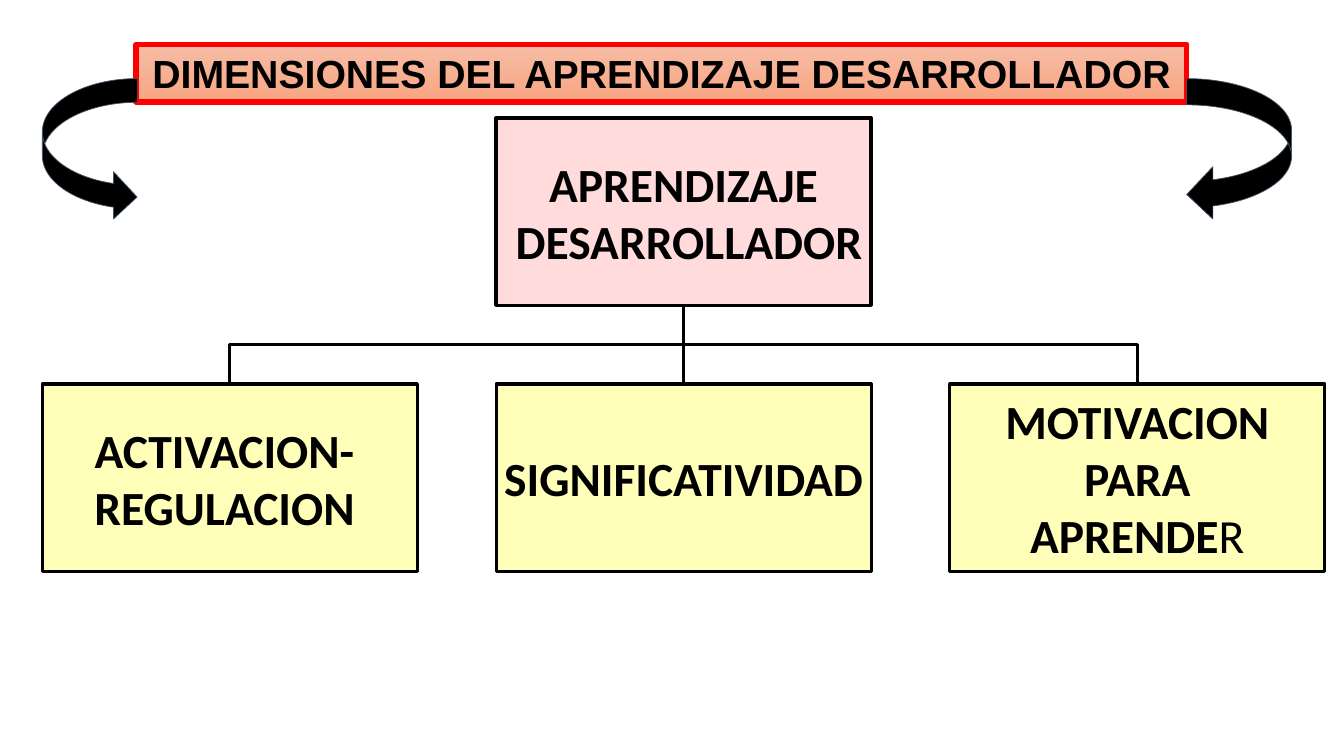
"""Build the slide on the dimensions of developmental learning."""
from dataclasses import dataclass

from lxml import etree
from pptx import Presentation
from pptx import util as u
from pptx.dml.color import RGBColor
from pptx.enum import shapes, text
from pptx.oxml.ns import qn

BLACK = "000000"
NODE_W, NODE_H = 372, 186
TOP_Y, CHILD_Y = 117, 381
CHILD_X, CHILD_STEP = 42, 450


@dataclass
class Run:
    text: str
    bold: bool = True


@dataclass
class Node:
    x: int
    y: int
    fill: str
    alpha: int
    line: float
    lines: list[list[Run]]

    @property
    def mid(self) -> int:
        return self.x + NODE_W // 2


@dataclass
class Arrow:
    kind: shapes.MSO_SHAPE
    x: int
    w: int


CHILD_LINES = [
    [[Run("ACTIVACION- ")], [Run("REGULACION ")]],
    [[Run("SIGNIFICATIVIDAD")]],
    [[Run("MOTIVACION")], [Run("PARA")], [Run("APRENDE"), Run("R", False)]],
]
PARENT = Node(CHILD_X + CHILD_STEP, TOP_Y, "FF0000", 14, 2.5,
              [[Run("APRENDIZAJE")], [Run(" DESARROLLADOR")]])
CHILDREN = [Node(CHILD_X + i * CHILD_STEP, CHILD_Y, "FFFF00", 27, 2.25, lines)
            for i, lines in enumerate(CHILD_LINES)]
ARROWS = [Arrow(shapes.MSO_SHAPE.CURVED_RIGHT_ARROW, 42, 94),
          Arrow(shapes.MSO_SHAPE.CURVED_LEFT_ARROW, 1177, 104)]


def px(n: int) -> int:
    """Turn px, a hundredth of an inch each, into EMU."""
    return u.Emu(n * 9144)


def rgb(value: str) -> RGBColor:
    """Turn a hex string into a colour."""
    return RGBColor.from_string(value)


def set_line(sp, colour: str, width: float) -> None:
    """Give a shape or connector a solid line."""
    sp.line.color.rgb = rgb(colour)
    sp.line.width = u.Pt(width)


def add_shape(slide, kind, x: int, y: int, w: int, h: int):
    """Add a preset shape without a shadow."""
    sp = slide.shapes.add_shape(kind, px(x), px(y), px(w), px(h))
    sp.shadow.inherit = False
    return sp


def write(sp, lines: list[list[Run]], font: str, size: int, inset: tuple[int, int]) -> None:
    """Write centred paragraphs into a shape."""
    tf = sp.text_frame
    dx, dy = map(px, inset)
    frame = {"word_wrap": False, "vertical_anchor": text.MSO_ANCHOR.MIDDLE,
             "margin_left": dx, "margin_right": dx, "margin_top": dy, "margin_bottom": dy}
    for name, value in frame.items():
        setattr(tf, name, value)
    for i, runs in enumerate(lines):
        p = tf.add_paragraph() if i else tf.paragraphs[0]
        p.alignment = text.PP_ALIGN.CENTER
        for run in runs:
            r = p.add_run()
            r.text = run.text
            r.font.color.rgb = rgb(BLACK)
            for name, value in {"name": font, "size": u.Pt(size), "bold": run.bold}.items():
                setattr(r.font, name, value)


def add_node(slide, node: Node):
    """Draw one box of the hierarchy with a see-through fill."""
    sp = add_shape(slide, shapes.MSO_SHAPE.RECTANGLE, node.x, node.y, NODE_W, NODE_H)
    sp.fill.solid()
    sp.fill.fore_color.rgb = rgb(node.fill)
    clr = sp.fill._xPr.find(qn("a:solidFill")).find(qn("a:srgbClr"))
    etree.SubElement(clr, qn("a:alpha"), val=str(node.alpha * 1000))
    set_line(sp, BLACK, node.line)
    write(sp, node.lines, "Calibri", 34, (2, 2))
    return sp


def add_link(slide, child: Node, parent_sp, child_sp) -> None:
    """Link the parent box with a child, straight or by an elbow."""
    start, end = TOP_Y + NODE_H, child.y
    if child.mid == PARENT.mid:
        sp = slide.shapes.add_connector(shapes.MSO_CONNECTOR.STRAIGHT, px(PARENT.mid),
                                        px(start), px(child.mid), px(end))
        sp.begin_connect(parent_sp, 2)
        sp.end_connect(child_sp, 0)
        etree.SubElement(sp._element.spPr, qn("a:effectLst"))
        set_line(sp, BLACK, 2.5)
        return
    bend = (start + end) // 2
    elbow = slide.shapes.build_freeform(px(PARENT.mid), px(start))
    corners = [(PARENT.mid, bend), (child.mid, bend), (child.mid, end)]
    elbow.add_line_segments([(px(x), px(y)) for x, y in corners], close=False)
    sp = elbow.convert_to_shape()
    sp.shadow.inherit = False
    sp.fill.background()
    set_line(sp, BLACK, 2.25)


def add_title(slide) -> None:
    """Draw the title banner with its gradient."""
    sp = add_shape(slide, shapes.MSO_SHAPE.RECTANGLE, 135, 44, 1042, 57)
    sp.fill.gradient()
    sp.fill.gradient_angle = 270
    for stop, colour in zip(sp.fill.gradient_stops, ("F7BDA5", "F8A582")):
        stop.color.rgb = rgb(colour)
    set_line(sp, "FF0000", 4)
    write(sp, [[Run("DIMENSIONES DEL APRENDIZAJE DESARROLLADOR")]], "Arial", 28, (10, 5))


def add_arrow(slide, arrow: Arrow) -> None:
    """Draw one curved arrow beside the title."""
    sp = add_shape(slide, arrow.kind, arrow.x, 78, arrow.w, 141)
    sp.fill.solid()
    sp.fill.fore_color.rgb = rgb(BLACK)
    set_line(sp, "44546A", 0.5)


def main() -> None:
    """Build and save the slide."""
    prs = Presentation()
    prs.slide_width, prs.slide_height = px(1333), px(750)
    s = prs.slides.add_slide(prs.slide_layouts[6])
    parent_sp = add_node(s, PARENT)
    for child in CHILDREN:
        add_link(s, child, parent_sp, add_node(s, child))
    add_title(s)
    for arrow in ARROWS:
        add_arrow(s, arrow)
    prs.save("out.pptx")


if __name__ == "__main__":
    main()
